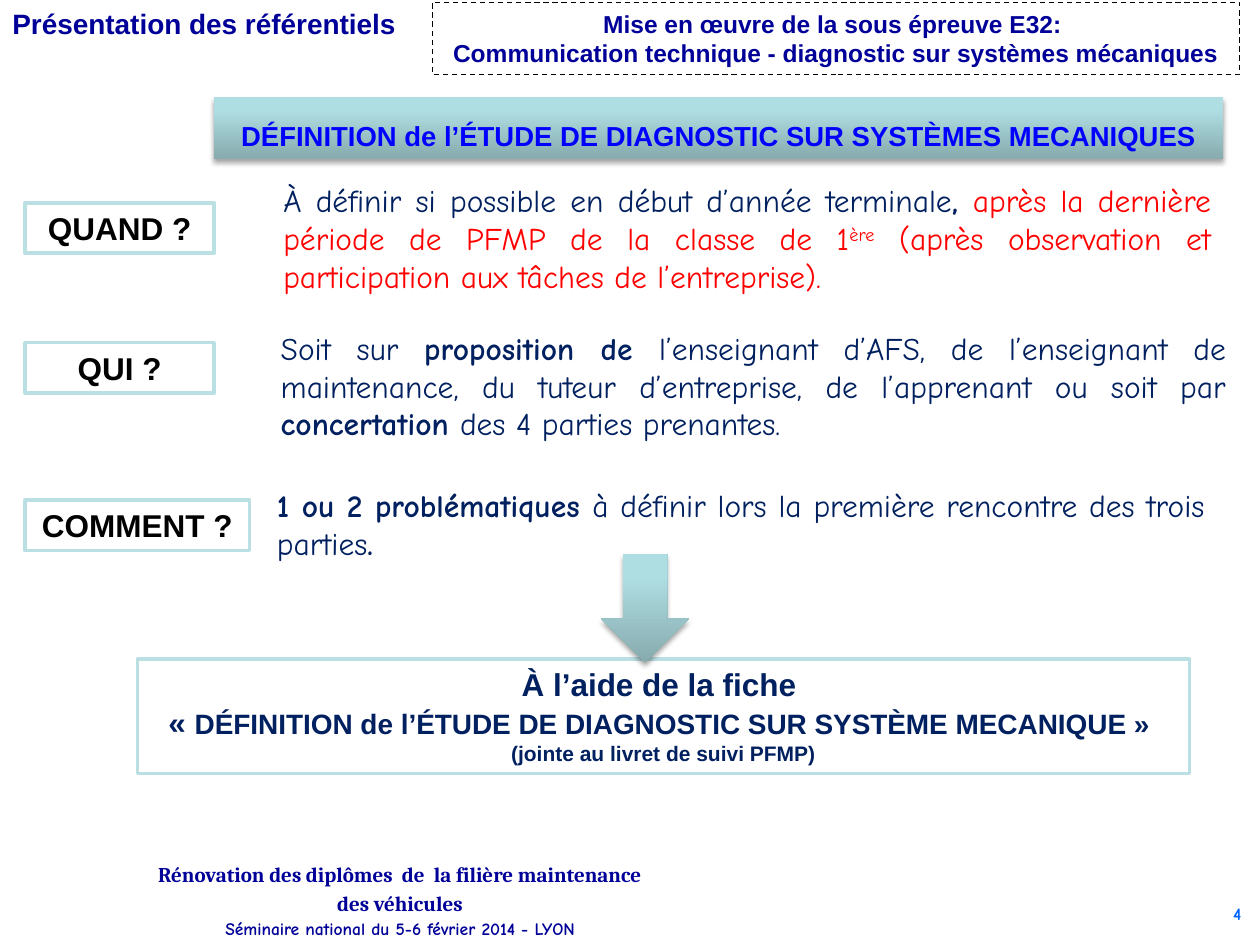
from dataclasses import dataclass

import pptx
import pptx.dml.color
import pptx.enum.dml
import pptx.enum.shapes
import pptx.enum.text
import pptx.oxml
import pptx.oxml.ns
import pptx.util
from pptx.util import Inches

ALIGN = pptx.enum.text.PP_ALIGN
ANCHOR = pptx.enum.text.MSO_ANCHOR
AUTO_SIZE = pptx.enum.text.MSO_AUTO_SIZE
SHAPE = pptx.enum.shapes.MSO_SHAPE


@dataclass(frozen=True)
class Theme:
    sans: str = "Arial"
    hand: str = "Comic Neue"
    serif: str = "Cambria"
    navy: str = "000099"
    ink: str = "002060"
    blue: str = "0000FF"
    page_blue: str = "0066FF"
    red: str = "FF0000"
    black: str = "000000"
    white: str = "FFFFFF"
    border: str = "BBE0E3"
    gradient: tuple = ((0, "87ABAE"), (80, "AFDEE2"), (100, "AFE0E4"))
    body: float = 18
    heading: float = 16
    banner: float = 15.7
    header: float = 14
    small: float = 12
    tiny: float = 10


THEME = Theme()


def rgb(value):
    return pptx.dml.color.RGBColor.from_string(value)


def format_run(run, size, name, color, bold=False, baseline=0):
    values = {"size": pptx.util.Pt(size), "name": name, "bold": bold}
    for attribute, value in values.items():
        setattr(run.font, attribute, value)
    run.font.color.rgb = rgb(color)
    if baseline:
        run.font.superscript = None if not hasattr(run.font, "superscript") else True
        run._r.get_or_add_rPr().set("baseline", str(baseline * 1000))


def write_text(shape, paragraphs, base, align=ALIGN.LEFT, anchor=ANCHOR.TOP,
               line_spacing=None, auto_size=AUTO_SIZE.NONE):
    """Write paragraphs, each a list of (text, overrides of the base format)."""
    frame = shape.text_frame
    values = {"word_wrap": True, "auto_size": auto_size, "vertical_anchor": anchor}
    for attribute, value in values.items():
        setattr(frame, attribute, value)
    for index, runs in enumerate(paragraphs):
        paragraph = frame.add_paragraph() if index else frame.paragraphs[0]
        paragraph.alignment = align
        paragraph.line_spacing = line_spacing
        for text, overrides in runs:
            run = paragraph.add_run()
            run.text = text
            format_run(run, **{**base, **overrides})


def add_text(slide, box, paragraphs, base, **options):
    shape = slide.shapes.add_textbox(*map(Inches, box))
    write_text(shape, paragraphs, base, **options)


def add_frame(slide, box, paragraphs, base, fill=THEME.white,
              line=THEME.border, width=2, dash=None):
    """Add an outlined rectangle with centred text."""
    shape = slide.shapes.add_shape(SHAPE.RECTANGLE, *map(Inches, box))
    shape.shadow.inherit = False
    if fill:
        shape.fill.solid()
        shape.fill.fore_color.rgb = rgb(fill)
    else:
        shape.fill.background()
    shape.line.color.rgb = rgb(line)
    shape.line.width = pptx.util.Pt(width)
    shape.line.dash_style = dash
    write_text(shape, paragraphs, base, align=ALIGN.CENTER,
               auto_size=AUTO_SIZE.SHAPE_TO_FIT_TEXT)


def apply_relief(shape):
    """Give the shape the vertical gradient and the soft shadow below it."""
    namespace = pptx.oxml.ns.nsdecls("a")
    stops = "".join(
        f'<a:gs pos="{position * 1000}"><a:srgbClr val="{color}"/></a:gs>'
        for position, color in THEME.gradient)
    properties = shape._element.spPr
    properties.append(pptx.oxml.parse_xml(
        f'<a:gradFill {namespace} rotWithShape="1"><a:gsLst>{stops}</a:gsLst>'
        '<a:lin ang="16200000" scaled="0"/></a:gradFill>'))
    shape.line.fill.background()
    properties.append(pptx.oxml.parse_xml(
        f'<a:effectLst {namespace}><a:outerShdw blurRad="{pptx.util.Pt(3.1)}" '
        f'dist="{pptx.util.Pt(1.8)}" dir="5400000" rotWithShape="0">'
        f'<a:srgbClr val="{THEME.black}"><a:alpha val="35000"/></a:srgbClr>'
        '</a:outerShdw></a:effectLst>'))


def add_header(slide, section_box, exam_box):
    base = {"size": THEME.heading, "name": THEME.sans, "color": THEME.navy, "bold": True}
    add_text(slide, section_box, [[("Présentation des référentiels", {})]], base)
    add_frame(slide, exam_box, [
        [("Mise en œuvre de la sous épreuve E32: ", {})],
        [("Communication technique - diagnostic sur systèmes mécaniques", {})],
    ], {**base, "size": THEME.header}, fill=None, line=THEME.black, width=0.75,
        dash=pptx.enum.dml.MSO_LINE.DASH)


def place_title(slide, box):
    title = slide.shapes.title
    for attribute, value in zip(("left", "top", "width", "height"), box):
        setattr(title, attribute, Inches(value))
    apply_relief(title)
    text = "DÉFINITION de l’ÉTUDE DE DIAGNOSTIC SUR SYSTÈMES MECANIQUES"
    write_text(title, [[(text, {})]],
               {"size": THEME.banner, "name": THEME.sans, "color": THEME.blue, "bold": True},
               align=ALIGN.CENTER, anchor=ANCHOR.BOTTOM)


def add_question(slide, label_box, answer_box, label, answer):
    add_frame(slide, label_box, [[(label, {})]],
              {"size": THEME.body, "name": THEME.sans, "color": THEME.black, "bold": True})
    add_text(slide, answer_box, [answer],
             {"size": THEME.body, "name": THEME.hand, "color": THEME.ink},
             align=ALIGN.JUSTIFY, auto_size=AUTO_SIZE.SHAPE_TO_FIT_TEXT)


def add_conclusion(slide, box, arrow_box):
    add_frame(slide, box, [
        [("À l’aide de la fiche ", {})],
        [("«\u00a0", {}),
         ("DÉFINITION de l’ÉTUDE DE DIAGNOSTIC SUR SYSTÈME MECANIQUE\u00a0» ",
          {"size": THEME.heading})],
        [("(jointe au livret de suivi PFMP)", {"size": THEME.small})],
    ], {"size": THEME.body, "name": THEME.sans, "color": THEME.ink, "bold": True})
    arrow = slide.shapes.add_shape(SHAPE.DOWN_ARROW, *map(Inches, arrow_box))
    apply_relief(arrow)


def add_footer(slide, event_box, number_box):
    base = {"size": THEME.tiny, "name": THEME.hand, "color": THEME.navy, "bold": True}
    add_text(slide, event_box, [
        [("Rénovation des diplômes  de  la filière maintenance des véhicules",
          {"size": THEME.small, "name": THEME.serif})],
        [("Séminaire national du 5-6 février 2014 - LYON", {})],
    ], base, align=ALIGN.CENTER, anchor=ANCHOR.MIDDLE, line_spacing=1.15)
    add_text(slide, number_box, [[("4", {"color": THEME.page_blue})]], base,
             align=ALIGN.RIGHT)


def main():
    presentation = pptx.Presentation()
    presentation.slide_width = Inches(10)
    presentation.slide_height = Inches(7.5)
    slide = presentation.slides.add_slide(presentation.slide_layouts[5])
    bold, red = {"bold": True}, {"color": THEME.red}

    add_header(slide, (0, 0, 3.27, 0.37), (3.43, 0.02, 6.41, 0.57))
    place_title(slide, (1.7, 0.77, 8.01, 0.49))
    add_question(slide, (0.2, 1.61, 1.5, 0.4), (2.15, 1.39, 7.56, 1.01), "QUAND ?", [
        ("À définir si possible en début d’année terminale", {}),
        (", ", bold),
        ("après la dernière période de PFMP de la classe de 1", red),
        ("ère", {**red, "baseline": 30}),
        (" (après observation et participation aux tâches de l’entreprise).", red),
    ])
    add_question(slide, (0.2, 2.72, 1.5, 0.4), (2.13, 2.56, 7.7, 1.01), "QUI ?", [
        ("Soit sur ", {}),
        ("proposition de ", bold),
        ("l’enseignant d’AFS, de l’enseignant de maintenance, du tuteur d’entreprise, "
         "de l’apprenant ou soit par", {}),
        (" concertation ", bold),
        ("des 4 parties prenantes.", {}),
    ])
    add_question(slide, (0.2, 3.97, 1.78, 0.4), (2.1, 3.81, 7.56, 0.71), "COMMENT ?", [
        ("1 ou 2 problématiques ", bold),
        ("à définir lors la première rencontre des trois parties", {}),
        (".", bold),
    ])
    add_conclusion(slide, (1.09, 5.23, 8.35, 0.91), (4.77, 4.4, 0.7, 0.86))
    add_footer(slide, (1.14, 6.85, 4.07, 0.56), (9.35, 7.12, 0.6, 0.32))
    presentation.save("out.pptx")


if __name__ == "__main__":
    main()
